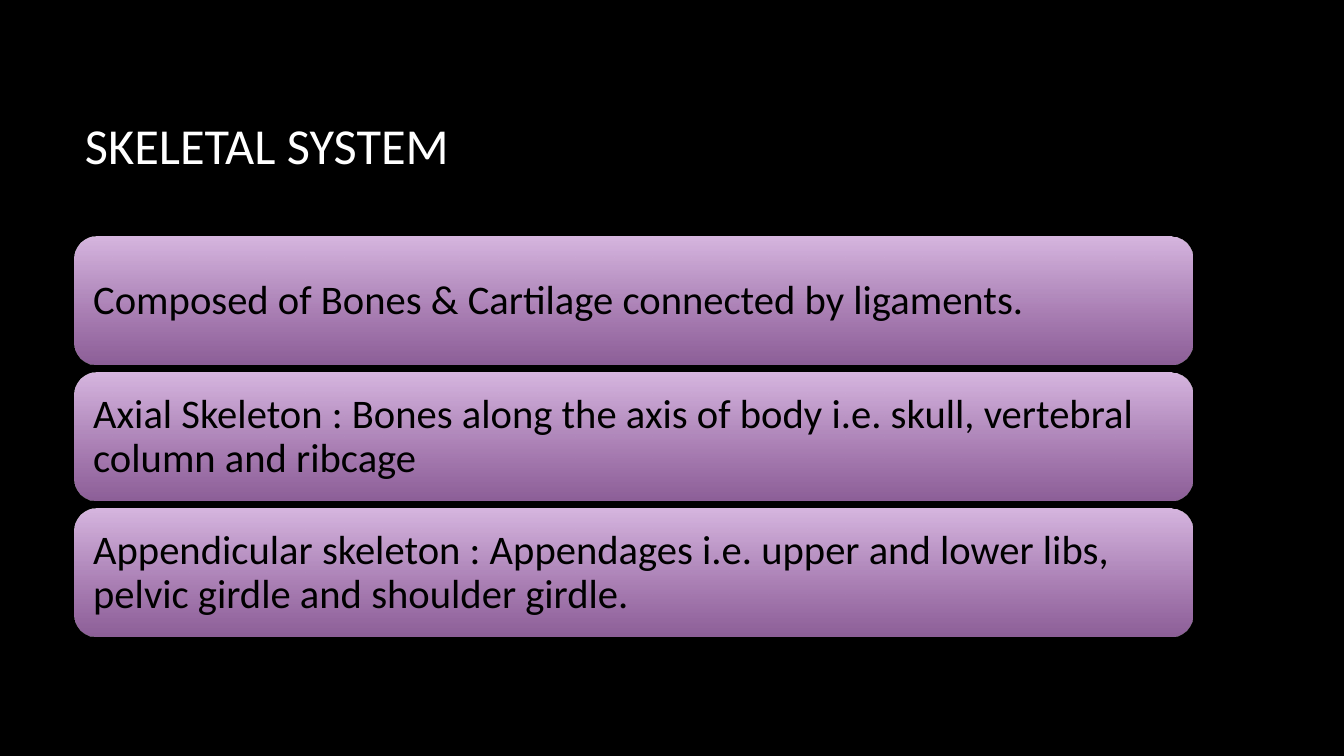
from lxml import etree
from pptx import Presentation
from pptx.dml.color import RGBColor
from pptx.enum.shapes import MSO_SHAPE
from pptx.enum.text import MSO_ANCHOR, PP_ALIGN
from pptx.oxml.ns import qn
from pptx.util import Pt

ROUNDED = MSO_SHAPE.ROUNDED_RECTANGLE
MIDDLE = MSO_ANCHOR.MIDDLE
LEFT = PP_ALIGN.LEFT
THEME = {
    "font": "Calibri",
    "background": RGBColor(0x00, 0x00, 0x00),
    "title": RGBColor(0xFF, 0xFF, 0xFF),
    "body": RGBColor(0x00, 0x00, 0x00),
    "card_top": RGBColor(0xD8, 0xB7, 0xE1),
    "card_bottom": RGBColor(0xBF, 0x82, 0xCE),
    "card_bottom_alpha": 74,
    "title_size": 36,
    "body_size": 29,
}


def px(n):
    return round(n * 914400 / 100.8)


def write(s, text, size, color, inset, spacing=1.0):
    tf = s.text_frame
    tf.word_wrap = True
    tf.vertical_anchor = MIDDLE
    tf.margin_left = tf.margin_right = px(inset)
    tf.margin_top = tf.margin_bottom = px(inset)
    p = tf.paragraphs[0]
    p.alignment = LEFT
    p.line_spacing = spacing
    r = p.add_run()
    r.text = text
    r.font.name = THEME["font"]
    r.font.size = Pt(size)
    r.font.color.rgb = color


prs = Presentation()
prs.slide_width, prs.slide_height = px(1344), px(756)
slide = prs.slides.add_slide(prs.slide_layouts[6])
slide.background.fill.solid()
slide.background.fill.fore_color.rgb = THEME["background"]

LEFT_EDGE, WIDTH = 75, 1118
title = slide.shapes.add_textbox(px(LEFT_EDGE), px(68), px(WIDTH), px(160))
write(title, "SKELETAL SYSTEM", THEME["title_size"], THEME["title"], inset=10, spacing=0.9)

CARD_TOP, CARD_HEIGHT, CARD_GAP = 237, 128, 8
facts = [
    "Composed of Bones & Cartilage connected by ligaments.",
    "Axial Skeleton : Bones along the axis of body i.e. skull, vertebral column and ribcage",
    "Appendicular skeleton : Appendages i.e. upper and lower libs, pelvic girdle and shoulder girdle.",
]
for i, fact in enumerate(facts):
    top = CARD_TOP + i * (CARD_HEIGHT + CARD_GAP)
    card = slide.shapes.add_shape(ROUNDED, px(LEFT_EDGE), px(top), px(WIDTH), px(CARD_HEIGHT))
    card.shadow.inherit = False
    card.line.fill.background()
    card.fill.gradient()
    card.fill.gradient_angle = 270
    first, last = card.fill.gradient_stops
    first.position, last.position = 0, 1
    first.color.rgb = THEME["card_top"]
    last.color.rgb = THEME["card_bottom"]
    end_color = card.fill._xPr.findall(".//" + qn("a:srgbClr"))[-1]
    etree.SubElement(end_color, qn("a:alpha"), val=str(THEME["card_bottom_alpha"] * 1000))
    write(card, fact, THEME["body_size"], THEME["body"], inset=12, spacing=0.9)

prs.save("out.pptx")
